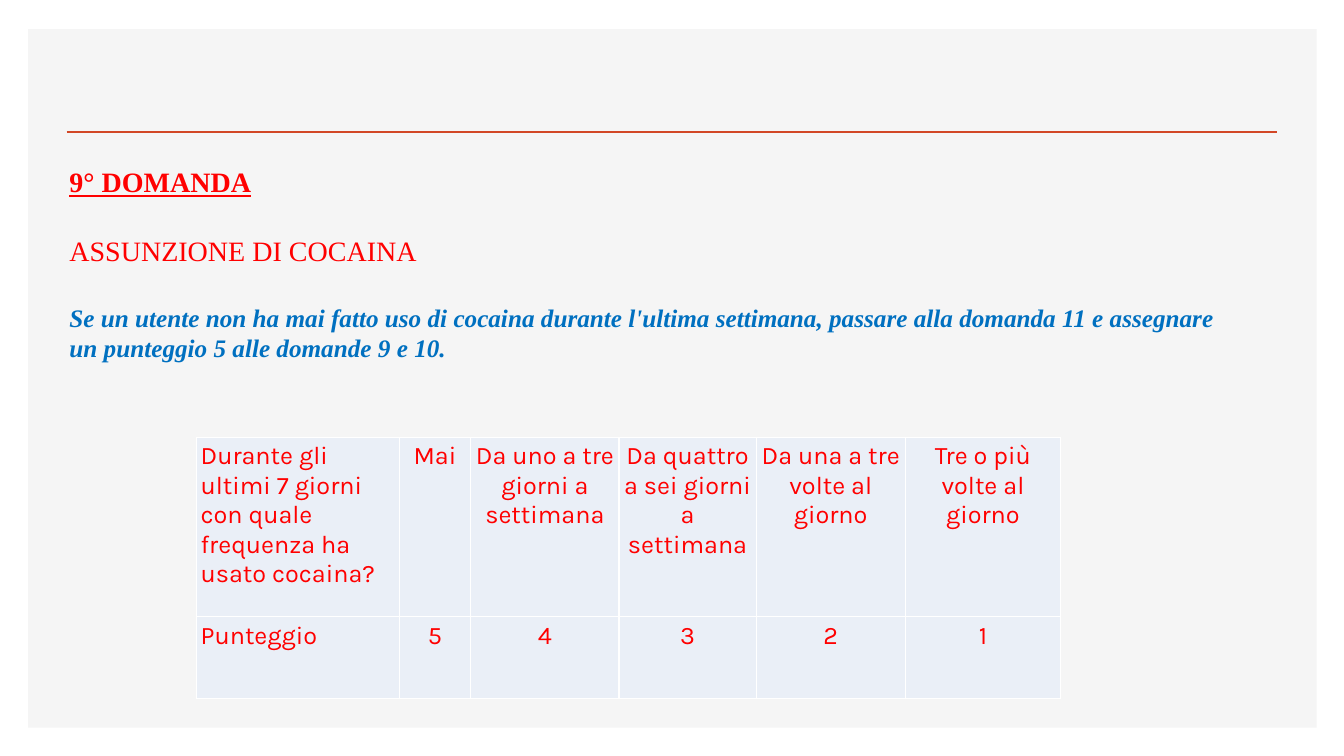
import dataclasses
import typing

import lxml.etree
import pptx
import pptx.dml.color
import pptx.enum.shapes
import pptx.enum.text
import pptx.oxml
import pptx.oxml.ns
import pptx.util

Inches = pptx.util.Inches
Align = pptx.enum.text.PP_ALIGN
Anchor = pptx.enum.text.MSO_ANCHOR


@dataclasses.dataclass(frozen=True)
class Theme:
    panel: str = "F5F5F5"
    rule: str = "D24726"
    red: str = "FF0000"
    blue: str = "0070C0"
    cell: str = "EAEFF7"
    border: str = "FFFFFF"
    serif: str = "Times New Roman"
    sans: str = "Karla"
    heading: int = 20
    body: int = 18
    paragraph_gap: int = 25
    rule_width: int = 2
    border_width: int = 1


@dataclasses.dataclass(frozen=True)
class Line:
    text: str
    size: int
    color: str
    bold: bool = False
    italic: bool = False
    underline: bool = False


@dataclasses.dataclass(frozen=True)
class Column:
    width: float
    label: str
    score: str
    align: Align = Align.CENTER


THEME = Theme()
LINES = (
    Line("9° DOMANDA", THEME.heading, THEME.red, bold=True, underline=True),
    Line("ASSUNZIONE DI COCAINA", THEME.heading, THEME.red),
    Line(
        "Se un utente non ha mai fatto uso di cocaina durante l'ultima settimana, "
        "passare alla domanda 11 e assegnare un punteggio 5 alle domande 9 e 10.",
        THEME.body, THEME.blue, bold=True, italic=True,
    ),
)
COLUMNS = (
    Column(2.01, "Durante gli ultimi 7 giorni con quale frequenza ha usato cocaina?",
           "Punteggio", Align.LEFT),
    Column(0.71, "Mai", "5"),
    Column(1.47, "Da uno a tre giorni a settimana", "4"),
    Column(1.36, "Da quattro a sei giorni a settimana", "3"),
    Column(1.48, "Da una a tre volte al giorno", "2"),
    Column(1.54, "Tre o più volte al giorno", "1"),
)
ROW_HEIGHTS = (1.78, 0.81)


def rgb(color: str) -> pptx.dml.color.RGBColor:
    """Turn a hexadecimal string into a colour."""
    return pptx.dml.color.RGBColor.from_string(color)


def write(para: typing.Any, text: str, *, font: str, size: int, color: str,
          bold: bool = False, italic: bool = False, underline: bool = False,
          align: Align = Align.LEFT, gap: int = 0) -> None:
    """Write formatted text into a paragraph."""
    para.alignment = align
    para.space_before = pptx.util.Pt(gap)
    span = para.add_run()
    span.text = text
    span.font.name = font
    span.font.size = pptx.util.Pt(size)
    span.font.color.rgb = rgb(color)
    span.font.bold = bold
    span.font.italic = italic
    span.font.underline = underline


def draw_backdrop(page: typing.Any) -> None:
    """Draw the grey panel and the title rule."""
    panel = page.shapes.add_shape(
        pptx.enum.shapes.MSO_SHAPE.RECTANGLE,
        Inches(0.28), Inches(0.29), Inches(12.78), Inches(6.93))
    panel.shadow.inherit = False
    panel.fill.solid()
    panel.fill.fore_color.rgb = rgb(THEME.panel)
    panel.line.fill.background()
    rule = page.shapes.add_connector(
        pptx.enum.shapes.MSO_CONNECTOR.STRAIGHT,
        Inches(0.66), Inches(1.31), Inches(12.67), Inches(1.31))
    rule.line.color.rgb = rgb(THEME.rule)
    rule.line.width = pptx.util.Pt(THEME.rule_width)
    lxml.etree.SubElement(rule._element.spPr, pptx.oxml.ns.qn("a:effectLst"))


def draw_question(page: typing.Any, lines: typing.Sequence[Line]) -> None:
    """Draw the question text above the table."""
    box = page.shapes.add_textbox(Inches(0.59), Inches(1.59), Inches(11.67), Inches(2.05))
    frame = box.text_frame
    frame.word_wrap = True
    frame.auto_size = pptx.enum.text.MSO_AUTO_SIZE.SHAPE_TO_FIT_TEXT
    frame.vertical_anchor = Anchor.MIDDLE
    for index, line in enumerate(lines):
        para = frame.add_paragraph() if index else frame.paragraphs[0]
        write(para, font=THEME.serif, gap=THEME.paragraph_gap if index else 0,
              **dataclasses.asdict(line))


def format_cell(cell: typing.Any) -> None:
    """Set the margins, borders and fill of a table cell."""
    cell.margin_left = cell.margin_right = Inches(0.04)
    cell.margin_top = cell.margin_bottom = Inches(0.04)
    cell.vertical_anchor = Anchor.TOP
    properties = cell._tc.get_or_add_tcPr()
    for side in ("lnL", "lnR", "lnT", "lnB"):
        properties.append(pptx.oxml.parse_xml(
            f'<a:{side} {pptx.oxml.ns.nsdecls("a")} w="{pptx.util.Pt(THEME.border_width)}">'
            f'<a:solidFill><a:srgbClr val="{THEME.border}"/></a:solidFill></a:{side}>'))
    cell.fill.solid()
    cell.fill.fore_color.rgb = rgb(THEME.cell)


def draw_scores(page: typing.Any, columns: typing.Sequence[Column]) -> None:
    """Draw the table of answers and scores."""
    width = sum(column.width for column in columns)
    table = page.shapes.add_table(
        len(ROW_HEIGHTS), len(columns), Inches(1.95), Inches(4.34),
        Inches(width), Inches(sum(ROW_HEIGHTS))).table
    table.first_row = False
    table.horz_banding = False
    for row, height in zip(table.rows, ROW_HEIGHTS):
        row.height = Inches(height)
    for column_index, column in enumerate(columns):
        table.columns[column_index].width = Inches(column.width)
        for row_index, text in enumerate((column.label, column.score)):
            cell = table.cell(row_index, column_index)
            format_cell(cell)
            write(cell.text_frame.paragraphs[0], text, font=THEME.sans,
                  size=THEME.body, color=THEME.red, align=column.align)


def main() -> None:
    """Build the slide and save the deck."""
    deck = pptx.Presentation()
    deck.slide_width = Inches(13.33)
    deck.slide_height = Inches(7.5)
    page = deck.slides.add_slide(deck.slide_layouts[6])
    draw_backdrop(page)
    draw_scores(page, COLUMNS)
    draw_question(page, LINES)
    deck.save("out.pptx")


if __name__ == "__main__":
    main()
